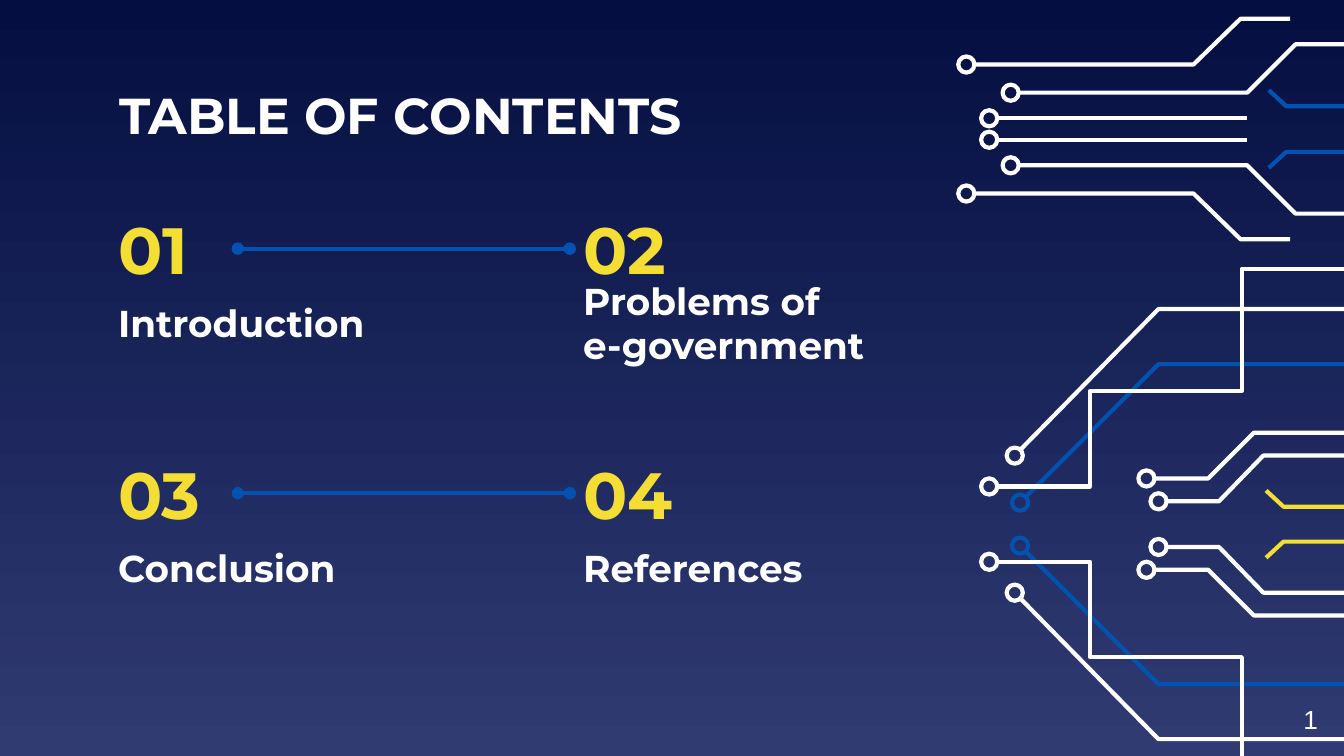
from math import hypot

from lxml import etree
from pptx import Presentation
from pptx.dml.color import RGBColor
from pptx.enum.shapes import MSO_CONNECTOR, MSO_SHAPE
from pptx.enum.text import MSO_ANCHOR
from pptx.oxml.ns import qn
from pptx.util import Emu, Pt

STRAIGHT = MSO_CONNECTOR.STRAIGHT
OVAL = MSO_SHAPE.OVAL
MIDDLE = MSO_ANCHOR.MIDDLE

COLORS = {
    "white": "FFFFFF",
    "blue": "0152B1",
    "yellow": "F5DE34",
    "bg_top": "040E41",
    "bg_bottom": "303B72",
}
COLUMNS, ROWS = 10, 5.625
UNIT = 914400  # one grid column or row
STROKE = Pt(2.25)
NODE_R = 0.06
INSET = 0.1

# Each trace: colour, has a node at its first point, points as
# (columns from the box's left edge, rows away from its mirror axis).
TOP_TRACES = [
    ("blue", False, [(2.44, 0.29), (2.57, 0.17), (3.13, 0.17)]),
    ("white", True, [(0.19, 0.48), (1.88, 0.48), (2.23, 0.82), (2.6, 0.82)]),
    ("white", True, [(0.52, 0.27), (2.28, 0.27), (2.64, 0.63), (3.25, 0.63)]),
    ("white", True, [(0.36, 0.08), (2.28, 0.08)]),
]
BOTTOM_TRACES = [
    ("white", True, [(1.62, 0.17), (2.07, 0.17), (2.4, 0.51), (3.2, 0.51)]),
    ("white", True, [(1.53, 0.34), (1.99, 0.34), (2.33, 0.68), (3.2, 0.68)]),
    ("yellow", False, [(2.42, 0.25), (2.55, 0.13), (3.11, 0.13)]),
    ("blue", True, [(0.59, 0.16), (1.62, 1.19), (3.19, 1.19)]),
    ("white", True, [(0.36, 0.28), (1.11, 0.28), (1.11, 0.99), (2.24, 0.99),
                     (2.24, 1.9), (3.2, 1.9)]),
    ("white", True, [(0.55, 0.51), (1.62, 1.6), (3.2, 1.6)]),
]
CHAPTERS = [
    ("01", "Introduction"),
    ("02", "Problems of\ne-government"),
    ("03", "Conclusion"),
    ("04", "References"),
]


def u(value):
    return Emu(round(value * UNIT))


def rgb(name):
    return RGBColor.from_string(COLORS[name])


def set_background(slide):
    fill = slide.background.fill
    fill.gradient()
    fill.gradient_angle = 270
    for stop, name, position in zip(fill.gradient_stops, ("bg_top", "bg_bottom"), (0, 1)):
        stop.color.rgb = rgb(name)
        stop.position = position


def add_text(slide, box, text, size, color="white", font="Montserrat", bold=True):
    tf = slide.shapes.add_textbox(*map(u, box)).text_frame
    tf.word_wrap = True
    tf.vertical_anchor = MIDDLE
    tf.margin_left = tf.margin_right = tf.margin_top = tf.margin_bottom = u(INSET)
    p = tf.paragraphs[0]
    p.text = text
    p.font.name, p.font.size, p.font.bold = font, Pt(size), bold
    p.font.color.rgb = rgb(color)


def outline_only(sp, color):
    sp.shadow.inherit = False
    sp.fill.background()
    sp.line.color.rgb = rgb(color)
    sp.line.width = STROKE


def add_trace(slide, points, color, has_node):
    """Draw an open line that starts at the rim of its node, if it has one."""
    (x, y), (x2, y2) = points[:2]
    if has_node:
        node = slide.shapes.add_shape(
            OVAL, u(x - NODE_R), u(y - NODE_R), u(2 * NODE_R), u(2 * NODE_R))
        outline_only(node, color)
        share = NODE_R / hypot(x2 - x, y2 - y)
        x, y = x + share * (x2 - x), y + share * (y2 - y)
    builder = slide.shapes.build_freeform(u(x), u(y))
    builder.add_line_segments([(u(px), u(py)) for px, py in points[1:]], close=False)
    outline_only(builder.convert_to_shape(), color)


def add_circuit(slide, left, axis, traces):
    """Draw the traces above the axis and mirrored below it."""
    for side in (-1, 1):
        for color, has_node, points in traces:
            placed = [(left + x, axis + side * y) for x, y in points]
            add_trace(slide, placed, color, has_node)


def add_link(slide, x1, x2, y):
    """Draw a blue connector with a dot at both ends."""
    line = slide.shapes.add_connector(STRAIGHT, u(x1), u(y), u(x2), u(y))
    line.line.color.rgb = rgb("blue")
    line.line.width = STROKE
    ln = line.line._get_or_add_ln()
    for end in ("a:headEnd", "a:tailEnd"):
        etree.SubElement(ln, qn(end), type="oval")
    etree.SubElement(line._element.spPr, qn("a:effectLst"))


def add_contents(slide, left, top, column_gap, row_gap):
    number_w, number_h, name_w, name_h = 0.99, 0.58, 2.41, 0.52
    for i, (number, name) in enumerate(CHAPTERS):
        row, column = divmod(i, 2)
        x, y = left + column * column_gap, top + row * row_gap
        add_text(slide, (x, y, number_w, number_h), number, 35, "yellow")
        add_text(slide, (x, y + number_h, name_w, name_h), name, 20)
        if column == 0:
            add_link(slide, x + number_w, x + column_gap, y + number_h / 2)


def main():
    prs = Presentation()
    prs.slide_width, prs.slide_height = u(COLUMNS), u(ROWS)
    slide = prs.slides.add_slide(prs.slide_layouts[6])
    set_background(slide)
    add_circuit(slide, 7, 0.96, TOP_TRACES)
    add_circuit(slide, 7, 3.9, BOTTOM_TRACES)
    add_text(slide, (0.79, 0.59, 5.87, 0.52), "TABLE OF CONTENTS", 27)
    add_contents(slide, 0.78, 1.56, 3.46, 1.82)
    add_text(slide, (9.6, 5.18, 0.32, 0.34), "1", 14, font="Arial", bold=False)
    prs.save("out.pptx")


if __name__ == "__main__":
    main()
